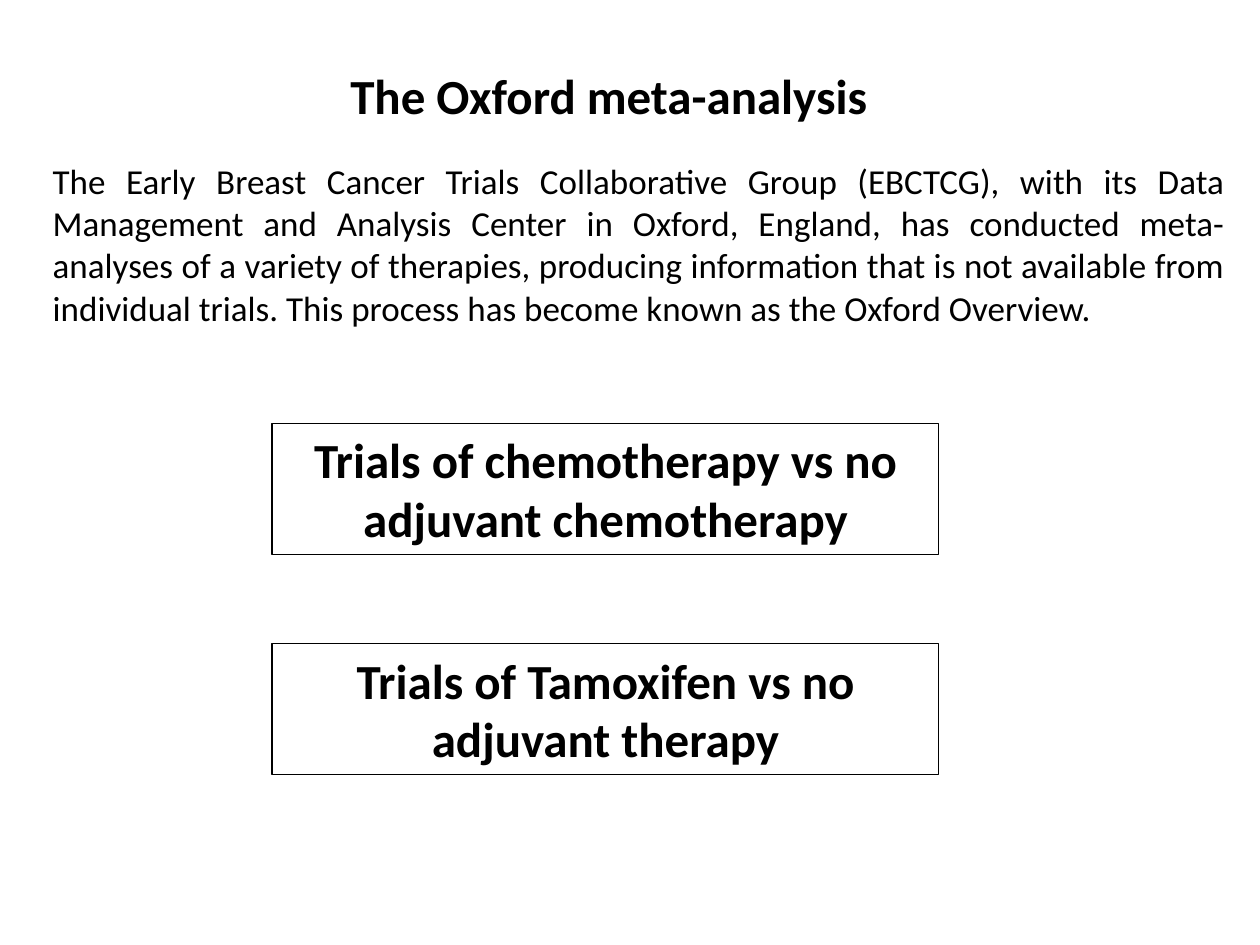
"""Build the Oxford meta-analysis slide."""
from dataclasses import dataclass

from pptx import Presentation
from pptx.dml.color import RGBColor
from pptx.enum.shapes import MSO_SHAPE
from pptx.enum.text import MSO_ANCHOR, MSO_AUTO_SIZE, PP_ALIGN
from pptx.util import Inches, Pt


@dataclass(frozen=True)
class Theme:
    font: str = "Calibri"
    ink: RGBColor = RGBColor(0, 0, 0)
    head: Pt = Pt(28)
    body: Pt = Pt(20)
    line: Pt = Pt(0.75)


theme = Theme()


def write(shape, text, size, bold, align, wrap=True):
    frame = shape.text_frame
    frame.text = text
    frame.word_wrap = wrap
    frame.auto_size = MSO_AUTO_SIZE.SHAPE_TO_FIT_TEXT
    frame.vertical_anchor = MSO_ANCHOR.TOP
    para = frame.paragraphs[0]
    para.alignment = align
    para.font.name = theme.font
    para.font.size = size
    para.font.bold = bold
    para.font.color.rgb = theme.ink


deck = Presentation()
deck.slide_width, deck.slide_height = Inches(10), Inches(7.5)
slide = deck.slides.add_slide(deck.slide_layouts[5])

title = slide.shapes.title
title.left, title.top = Inches(2.68), Inches(0.47)
title.width, title.height = Inches(4.35), Inches(0.57)
write(title, "The Oxford meta-analysis", theme.head, True, PP_ALIGN.LEFT, wrap=False)

intro = slide.shapes.add_textbox(Inches(0.32), Inches(1.22), Inches(9.5), Inches(1.45))
write(
    intro,
    "The Early Breast Cancer Trials Collaborative Group (EBCTCG), with its Data "
    "Management and Analysis Center in Oxford, England, has conducted meta-analyses "
    "of a variety of therapies, producing information that is not available from "
    "individual trials. This process has become known as the Oxford Overview.",
    theme.body, False, PP_ALIGN.JUSTIFY,
)

trials = [
    "Trials of chemotherapy vs no adjuvant chemotherapy",
    "Trials of Tamoxifen vs no adjuvant therapy",
]
for row, text in enumerate(trials):
    top = Inches(3.36 + 1.75 * row)
    box = slide.shapes.add_shape(
        MSO_SHAPE.RECTANGLE, Inches(2.16), top, Inches(5.29), Inches(1.04)
    )
    box.shadow.inherit = False
    box.fill.background()
    box.line.color.rgb = theme.ink
    box.line.width = theme.line
    write(box, text, theme.head, True, PP_ALIGN.CENTER)

deck.save("out.pptx")
